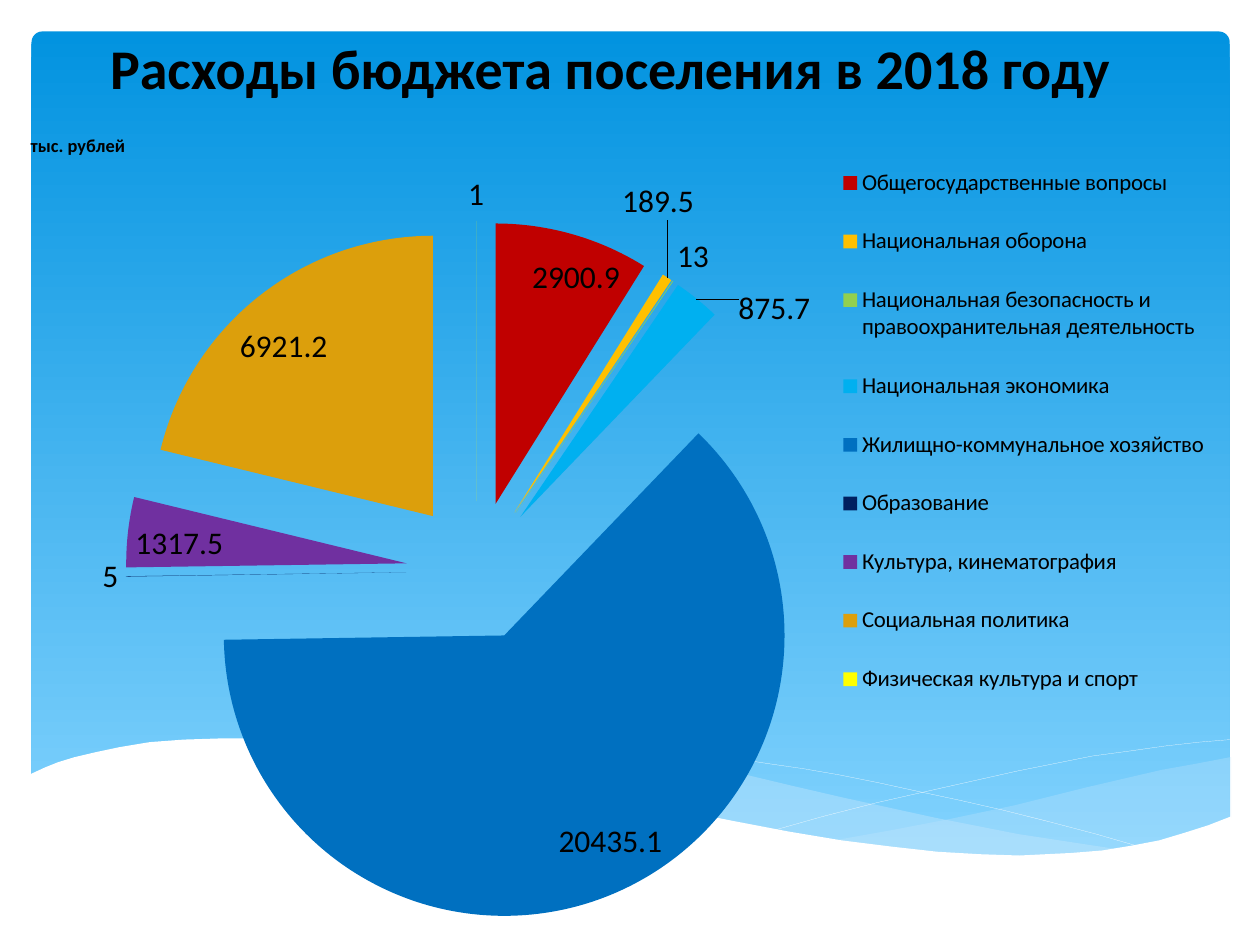
from dataclasses import dataclass

from lxml import etree
from pptx import Presentation
from pptx.chart.data import CategoryChartData
from pptx.dml.color import RGBColor
from pptx.enum.chart import XL_CHART_TYPE, XL_LABEL_POSITION, XL_LEGEND_POSITION
from pptx.enum.shapes import MSO_SHAPE
from pptx.enum.text import MSO_ANCHOR, PP_ALIGN
from pptx.oxml.ns import qn
from pptx.util import Inches, Pt

PIE = XL_CHART_TYPE.PIE
INSIDE, OUTSIDE = XL_LABEL_POSITION.INSIDE_END, XL_LABEL_POSITION.OUTSIDE_END
RIGHT = XL_LEGEND_POSITION.RIGHT
ROUNDED = MSO_SHAPE.ROUNDED_RECTANGLE
CENTER, MIDDLE = PP_ALIGN.CENTER, MSO_ANCHOR.MIDDLE


@dataclass(frozen=True)
class Theme:
    font: str = "Calibri"
    text: str = "000000"
    white: str = "FFFFFF"
    wave: str = "C6E7FC"
    sky_top: str = "0293E0"
    sky_bottom: str = "83D3FE"
    title_size: float = 32
    label_size: float = 18
    legend_size: float = 13
    unit_size: float = 10.5


@dataclass(frozen=True)
class Wave:
    points: tuple
    fill: str = ""
    alpha: int = 100  # opacity in percent
    line: str = ""


@dataclass(frozen=True)
class Expense:
    name: str
    value: float
    color: str
    position: object = INSIDE
    shift: tuple = ()  # label offset as a share of the chart


THEME = Theme()

WAVES = (
    Wave(((9.76, 6.01), (9.5, 6.06), (9.22, 6.11), (8.92, 6.18), (8.62, 6.25), (8.06, 6.39),
          (7.54, 6.5), (7.07, 6.59), (6.62, 6.67), (6.92, 6.71), (7.33, 6.76), (7.7, 6.79),
          (8.15, 6.8), (8.55, 6.78), (8.9, 6.74), (9.22, 6.67), (9.51, 6.59), (9.77, 6.49),
          (9.77, 6.01)), fill=THEME.wave, alpha=29),
    Wave(((8.94, 6.75), (8.67, 6.71), (8.08, 6.62), (7.42, 6.49), (6.69, 6.33), (6.3, 6.24),
          (5.84, 6.13), (5.42, 6.04), (5.02, 5.98), (4.65, 5.93), (4.2, 5.89), (3.8, 5.87),
          (3.45, 5.88), (3.14, 5.9), (2.87, 5.93), (3.23, 5.98), (3.63, 6.04), (4.05, 6.13),
          (4.5, 6.24), (4.91, 6.34), (5.3, 6.42), (5.67, 6.5), (6.02, 6.57), (6.35, 6.63),
          (6.66, 6.68), (6.96, 6.72), (7.23, 6.76), (7.49, 6.78), (7.86, 6.8), (8.39, 6.8),
          (8.68, 6.78)), fill=THEME.wave, alpha=40),
    Wave(((3.1, 5.97), (3.29, 5.94), (3.53, 5.91), (3.88, 5.89), (4.33, 5.89), (4.69, 5.9),
          (5.11, 5.94), (5.57, 5.98), (6.09, 6.06), (6.37, 6.1), (6.66, 6.15), (6.96, 6.21),
          (7.28, 6.28), (7.61, 6.35), (7.96, 6.43), (8.32, 6.52), (8.7, 6.62), (9.08, 6.73)),
         line=THEME.white),
    Wave(((6.14, 6.59), (6.53, 6.48), (6.96, 6.37), (7.49, 6.25), (8.07, 6.12), (8.67, 6),
          (8.97, 5.96), (9.25, 5.92), (9.52, 5.89), (9.76, 5.87)), line=THEME.white),
    Wave(((9.77, 6.48), (9.59, 6.55), (9.4, 6.61), (9.2, 6.67), (8.99, 6.71), (8.75, 6.75),
          (8.5, 6.77), (8.09, 6.79), (7.78, 6.78), (7.44, 6.76), (7.08, 6.72), (6.68, 6.67),
          (6.26, 6.6), (5.79, 6.51), (5.29, 6.41), (4.75, 6.29), (4.47, 6.22), (3.91, 6.09),
          (3.4, 5.99), (2.92, 5.92), (2.5, 5.88), (2.11, 5.86), (1.77, 5.86), (1.46, 5.87),
          (1.19, 5.89), (0.95, 5.93), (0.76, 5.97), (0.59, 6.01), (0.46, 6.05), (0.36, 6.09),
          (0.23, 6.15), (0.23, 7.31), (9.77, 7.31)), fill=THEME.white),
)

EXPENSES = (
    Expense("Общегосударственные вопросы", 2900.9, "C00000", INSIDE, (0.04, 0.02)),
    Expense("Национальная оборона", 189.5, "FFC000", OUTSIDE, (-0.04, -0.06)),
    Expense("Национальная безопасность и правоохранительная деятельность", 13, "92D050", OUTSIDE),
    Expense("Национальная экономика", 875.7, "00B0F0", OUTSIDE, (0.03, 0.04)),
    Expense("Жилищно-коммунальное хозяйство", 20435.1, "0070C0", INSIDE, (0.04, -0.03)),
    Expense("Образование", 5, "002060", OUTSIDE),
    Expense("Культура, кинематография", 1317.5, "7030A0", INSIDE, (0, -0.01)),
    Expense("Социальная политика", 6921.2, "DC9F0C", INSIDE, (-0.02, 0.03)),
    Expense("Физическая культура и спорт", 1, "FFFF00", OUTSIDE),
)


def rgb(value: str) -> RGBColor:
    return RGBColor.from_string(value)


def style_font(font, size: float, bold: bool = False) -> None:
    for name, value in {"name": THEME.font, "size": Pt(size), "bold": bold}.items():
        setattr(font, name, value)
    font.color.rgb = rgb(THEME.text)


def draw_sky(slide) -> None:
    sp = slide.shapes.add_shape(ROUNDED, Inches(0.25), Inches(0.25), Inches(9.51), Inches(6.6))
    sp.adjustments[0] = 0.013
    sp.shadow.inherit = False
    sp.line.fill.background()
    sp.fill.gradient()
    sp.fill.gradient_angle = 270
    for stop, color in zip(sp.fill.gradient_stops, (THEME.sky_top, THEME.sky_bottom)):
        stop.color.rgb = rgb(color)


def draw_wave(slide, wave: Wave) -> None:
    start, *rest = [(Inches(x), Inches(y)) for x, y in wave.points]
    builder = slide.shapes.build_freeform(*start)
    builder.add_line_segments(rest, close=bool(wave.fill))
    sp = builder.convert_to_shape()
    sp.shadow.inherit = False
    if wave.fill:
        sp.fill.solid()
        sp.fill.fore_color.rgb = rgb(wave.fill)
        color = sp._element.spPr.find(qn("a:solidFill"))[0]
        if wave.alpha < 100:
            etree.SubElement(color, qn("a:alpha"), val=str(wave.alpha * 1000))
    else:
        sp.fill.background()
    if wave.line:
        sp.line.color.rgb = rgb(wave.line)
        sp.line.width = Pt(0.1)
    else:
        sp.line.fill.background()


def draw_title(slide, text: str) -> None:
    box = slide.shapes.add_textbox(Inches(0.2), Inches(0.21), Inches(9.29), Inches(0.64))
    tf = box.text_frame
    tf.word_wrap = True
    tf.vertical_anchor = MIDDLE
    p = tf.paragraphs[0]
    p.alignment = CENTER
    r = p.add_run()
    r.text = text
    style_font(r.font, THEME.title_size, bold=True)


def set_layout(parent, index: int, **values) -> None:
    """Give a chart part a manual layout, as the child at the given index."""
    for old in parent.findall(qn("c:layout")):
        parent.remove(old)
    layout = etree.Element(qn("c:layout"))
    manual = etree.SubElement(layout, qn("c:manualLayout"))
    for name, value in values.items():
        etree.SubElement(manual, qn(f"c:{name}"), val=str(value))
    parent.insert(index, layout)


def draw_chart(slide) -> None:
    data = CategoryChartData(number_format="General")
    data.categories = [e.name for e in EXPENSES]
    data.add_series("Series 1", [e.value for e in EXPENSES])
    chart = slide.shapes.add_chart(
        PIE, Inches(0.12), Inches(0.76), Inches(9.76), Inches(6.74), data).chart
    style_font(chart.font, THEME.label_size)
    edge = {"xMode": "edge", "yMode": "edge"}

    chart.has_title = True
    title = chart.chart_title
    r = title.text_frame.paragraphs[0].add_run()
    r.text = "тыс. рублей"
    style_font(r.font, THEME.unit_size, bold=True)
    set_layout(title._element, 1, **edge, x=0.01, y=0.04)

    chart.has_legend = True
    legend = chart.legend
    legend.position = RIGHT
    legend.include_in_layout = False
    style_font(legend.font, THEME.legend_size)
    set_layout(legend._element, 1, **edge, x=0.66, y=0.05, w=0.32, h=0.69)

    plot = chart.plots[0]
    plot.vary_by_categories = True
    set_layout(plot._element.getparent(), 0, layoutTarget="inner", **edge,
               x=0.09, y=0.14, w=0.57, h=0.84)

    series = plot.series[0]
    labels = series.data_labels
    labels.show_value = True
    style_font(labels.font, THEME.label_size)
    for i, expense in enumerate(EXPENSES):
        point = series.points[i]
        point.format.fill.solid()
        point.format.fill.fore_color.rgb = rgb(expense.color)
        label = point.data_label
        label.position = expense.position
        style_font(label.font, THEME.label_size)
        if expense.shift:
            dx, dy = expense.shift
            set_layout(series._element.find(qn("c:dLbls")).findall(qn("c:dLbl"))[i], 1, x=dx, y=dy)
    explosion = etree.Element(qn("c:explosion"), val="25")
    series._element.find(qn("c:dPt")).addprevious(explosion)


def main() -> None:
    prs = Presentation()
    prs.slide_width, prs.slide_height = Inches(10), Inches(7.5)
    slide = prs.slides.add_slide(prs.slide_layouts[6])
    draw_sky(slide)
    for wave in WAVES:
        draw_wave(slide, wave)
    draw_title(slide, "Расходы бюджета поселения в 2018 году")
    draw_chart(slide)
    prs.save("out.pptx")


if __name__ == "__main__":
    main()
